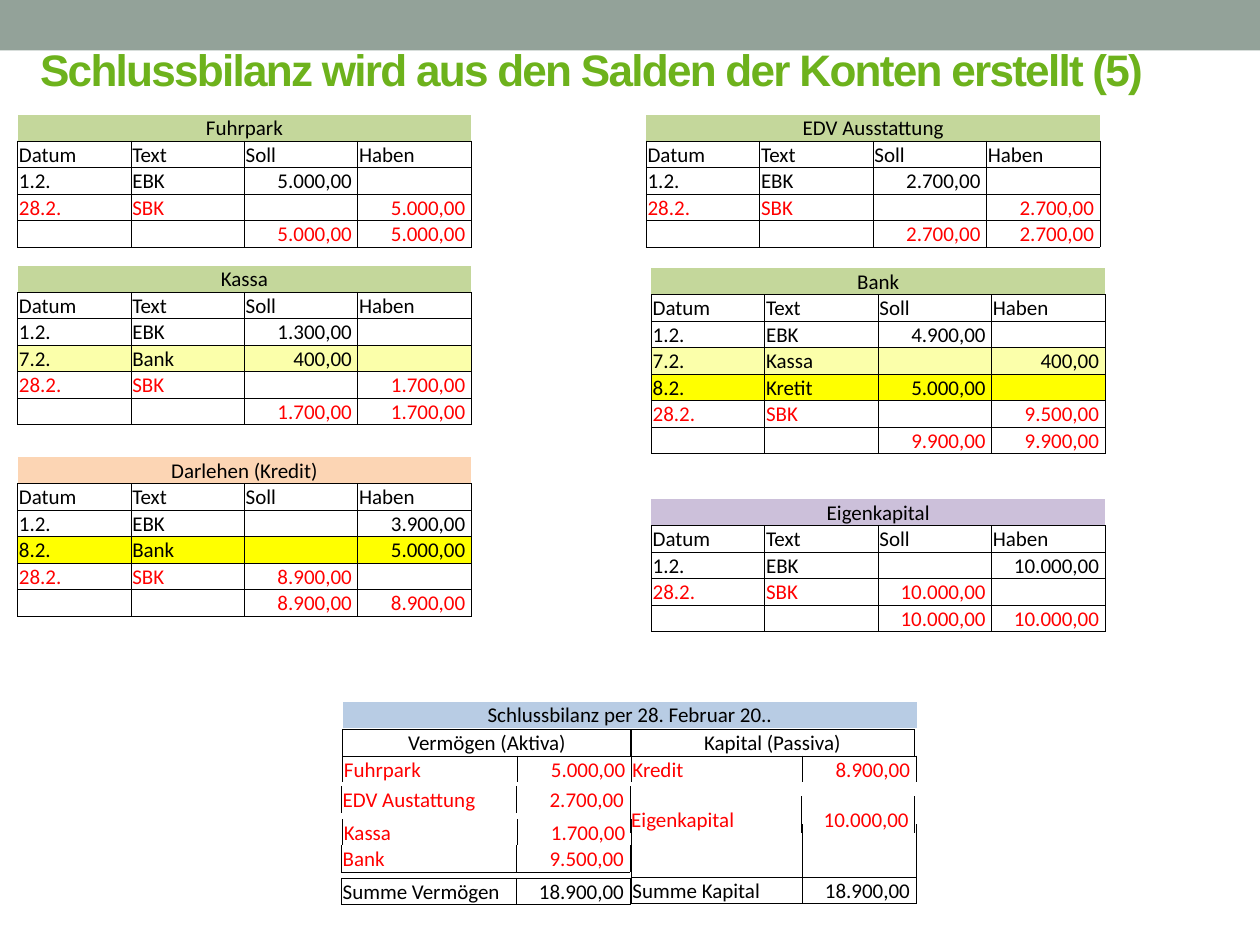
from lxml.etree import SubElement
from pptx import Presentation
from pptx.dml.color import RGBColor
from pptx.enum.shapes import MSO_SHAPE
from pptx.enum.text import MSO_ANCHOR, PP_ALIGN
from pptx.oxml.ns import qn
from pptx.util import Inches, Pt

BLACK = RGBColor(0x00, 0x00, 0x00)
RED = RGBColor(0xFF, 0x00, 0x00)
BAND_GREY = RGBColor(0x93, 0xA2, 0x99)
TITLE_GREEN = RGBColor(0x6D, 0xB2, 0x1C)
ASSET_GREEN = RGBColor(0xC4, 0xD7, 0x9B)
LOAN_ORANGE = RGBColor(0xFC, 0xD5, 0xB4)
EQUITY_PURPLE = RGBColor(0xCC, 0xC0, 0xDA)
BALANCE_BLUE = RGBColor(0xB8, 0xCC, 0xE4)
PALE_YELLOW = RGBColor(0xFB, 0xFF, 0xAA)
YELLOW = RGBColor(0xFF, 0xFF, 0x00)


def format_cell(cell, text, align, sides, color, fill):
    """Fill one cell; sides names the edges with a line, out of L, R, T and B."""
    margins = {"margin_left": 0.01, "margin_right": 0.01, "margin_top": 0.01, "margin_bottom": 0}
    for name, value in margins.items():
        setattr(cell, name, Inches(value))
    cell.vertical_anchor = MSO_ANCHOR.BOTTOM
    properties = cell._tc.get_or_add_tcPr()
    for side in "LRTB":
        line = SubElement(properties, qn(f"a:ln{side}"), w=str(Pt(0.5)))
        if side in sides:
            paint = SubElement(line, qn("a:solidFill"))
            SubElement(paint, qn("a:srgbClr"), val=str(BLACK))
        else:
            SubElement(line, qn("a:noFill"))
    if fill is None:
        cell.fill.background()
    else:
        cell.fill.solid()
        cell.fill.fore_color.rgb = fill
    para = cell.text_frame.paragraphs[0]
    para.alignment = align
    if text:
        span = para.add_run()
        span.text = text
        for name, value in {"name": "Calibri", "size": Pt(12)}.items():
            setattr(span.font, name, value)
        span.font.color.rgb = color
    else:
        SubElement(para._p, qn("a:endParaRPr"), sz="1200")


def add_grid(left, top, widths, rows, height=0.21):
    """Add a table; each row is (texts, sides, color, fill), a lone text spans all columns."""
    frame = page.shapes.add_table(len(rows), len(widths), Inches(left), Inches(top),
                                  Inches(sum(widths)), Inches(height * len(rows)))
    table = frame.table
    table.first_row = False
    table.horz_banding = False
    for column, width in zip(table.columns, widths):
        column.width = Inches(width)
    for index, (texts, sides, color, fill) in enumerate(rows):
        table.rows[index].height = Inches(height)
        if len(texts) < len(widths):
            table.cell(index, 0).merge(table.cell(index, len(widths) - 1))
        for position, text in enumerate(texts):
            align = PP_ALIGN.CENTER if len(texts) == 1 else PP_ALIGN.LEFT
            if text.endswith(",00"):
                text, align = f" {text} ", PP_ALIGN.RIGHT
            format_cell(table.cell(index, position), text, align, sides, color, fill)


deck = Presentation()
deck.slide_width, deck.slide_height = Inches(10), Inches(7.5)
page = deck.slides.add_slide(deck.slide_layouts[6])

band = page.shapes.add_shape(MSO_SHAPE.RECTANGLE, 0, 0, Inches(10), Inches(0.4))
band.shadow.inherit = False
band.fill.solid()
band.fill.fore_color.rgb = BAND_GREY
band.line.fill.background()

title = page.shapes.add_textbox(Inches(0.22), Inches(0.3), Inches(9), Inches(0.5))
title.text_frame.word_wrap = True
title.text_frame.vertical_anchor = MSO_ANCHOR.MIDDLE
span = title.text_frame.paragraphs[0].add_run()
span.text = "Schlussbilanz wird aus den Salden der Konten erstellt (5)"
for name, value in {"name": "Arial", "size": Pt(25.2), "bold": True}.items():
    setattr(span.font, name, value)
span.font.color.rgb = TITLE_GREEN
span._r.get_or_add_rPr().set("spc", "-100")

# Accounts: left, top, name, heading fill, entries (date, text, debit, credit, fill),
# closing debit, closing credit, total
accounts = [
    (0.14, 0.91, "Fuhrpark", ASSET_GREEN,
     [("1.2.", "EBK", "5.000,00", "", None)], "", "5.000,00", "5.000,00"),
    (5.13, 0.91, "EDV Ausstattung", ASSET_GREEN,
     [("1.2.", "EBK", "2.700,00", "", None)], "", "2.700,00", "2.700,00"),
    (0.14, 2.11, "Kassa", ASSET_GREEN,
     [("1.2.", "EBK", "1.300,00", "", None),
      ("7.2.", "Bank", "400,00", "", PALE_YELLOW)], "", "1.700,00", "1.700,00"),
    (5.17, 2.13, "Bank", ASSET_GREEN,
     [("1.2.", "EBK", "4.900,00", "", None),
      ("7.2.", "Kassa", "", "400,00", PALE_YELLOW),
      ("8.2.", "Kretit", "5.000,00", "", YELLOW)], "", "9.500,00", "9.900,00"),
    (0.14, 3.63, "Darlehen (Kredit)", LOAN_ORANGE,
     [("1.2.", "EBK", "", "3.900,00", None),
      ("8.2.", "Bank", "", "5.000,00", YELLOW)], "8.900,00", "", "8.900,00"),
    (5.17, 3.96, "Eigenkapital", EQUITY_PURPLE,
     [("1.2.", "EBK", "", "10.000,00", None)], "10.000,00", "", "10.000,00"),
]
for left, top, name, heading_fill, entries, debit, credit, total in accounts:
    rows = [([name], "B", BLACK, heading_fill),
            (["Datum", "Text", "Soll", "Haben"], "LRTB", BLACK, None)]
    rows += [(entry[:4], "LRTB", BLACK, entry[4]) for entry in entries]
    rows += [(["28.2.", "SBK", debit, credit], "LRTB", RED, None),
             (["", "", total, total], "LRTB", RED, None)]
    add_grid(left, top, [0.9] * 4, rows)

# Closing balance sheet
add_grid(2.72, 5.57, [4.56], [(["Schlussbilanz per 28. Februar 20.."], "", BLACK, BALANCE_BLUE)])
add_grid(2.72, 5.79, [2.29], [(["Vermögen (Aktiva)"], "LRTB", BLACK, None)])
add_grid(5, 5.79, [2.26], [(["Kapital (Passiva)"], "LRTB", BLACK, None)])

ASSET_WIDTHS = [1.39, 0.9]
CAPITAL_WIDTHS = [1.36, 0.9]
balance_lines = [
    (2.72, 6, ASSET_WIDTHS, "Fuhrpark", "5.000,00", "LRT", RED, 0.21),
    (2.71, 6.24, ASSET_WIDTHS, "EDV Austattung", "2.700,00", "LR", RED, 0.21),
    (2.72, 6.5, ASSET_WIDTHS, "Kassa", "1.700,00", "LR", RED, 0.21),
    (2.71, 6.71, ASSET_WIDTHS, "Bank", "9.500,00", "LRB", RED, 0.21),
    (2.71, 6.97, ASSET_WIDTHS, "Summe Vermögen", "18.900,00", "LRTB", BLACK, 0.21),
    (5.01, 6, CAPITAL_WIDTHS, "Kredit", "8.900,00", "LRT", RED, 0.21),
    (5, 6.32, CAPITAL_WIDTHS, "Eigenkapital", "10.000,00", "LR", RED, 0.29),
]
for left, top, widths, label, amount, sides, color, height in balance_lines:
    add_grid(left, top, widths, [([label, amount], sides, color, None)], height)

add_grid(5.01, 6.54, CAPITAL_WIDTHS, [
    (["", ""], "LR", BLACK, None),
    (["", ""], "LRB", BLACK, None),
    (["Summe Kapital", "18.900,00"], "LRTB", BLACK, None),
])

deck.save("out.pptx")
